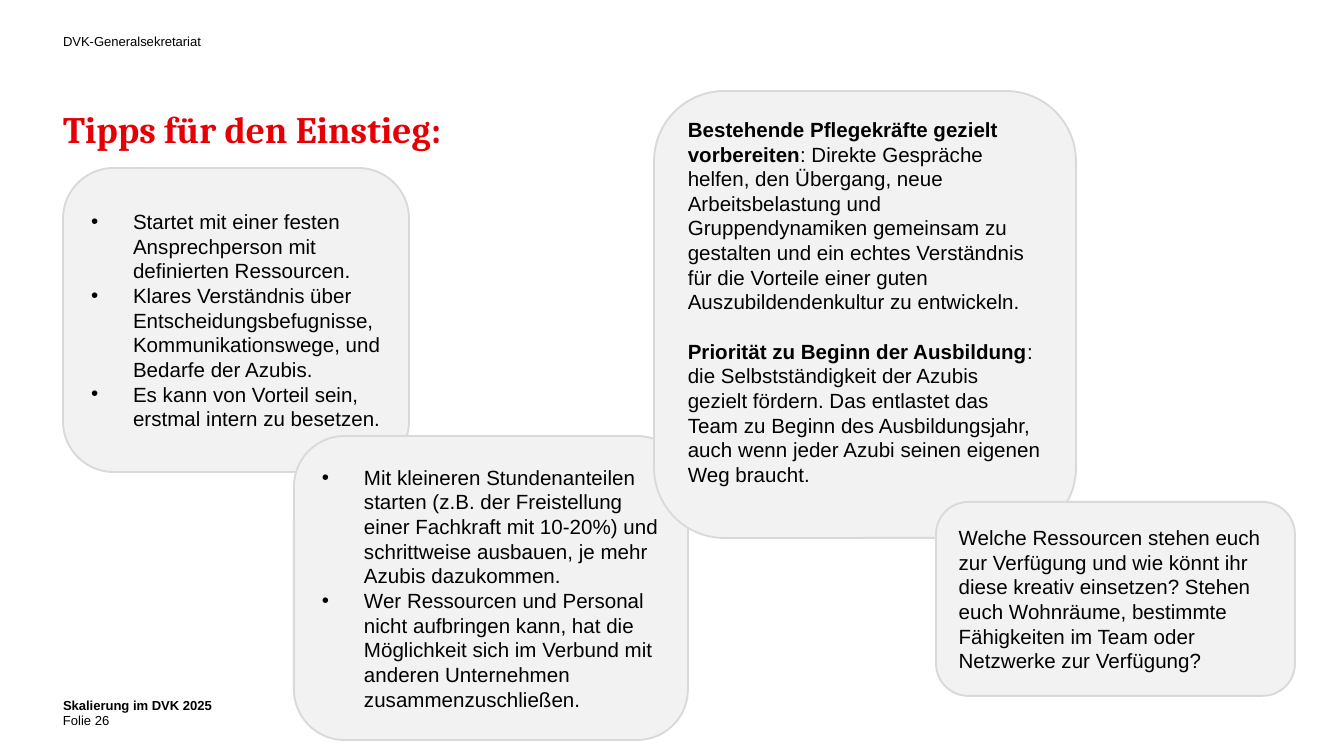
from dataclasses import dataclass

from lxml import etree
from pptx import Presentation
from pptx.dml.color import RGBColor
from pptx.enum.shapes import MSO_SHAPE
from pptx.enum.text import MSO_ANCHOR, PP_ALIGN
from pptx.oxml.ns import qn
from pptx.util import Emu, Pt

ROUNDED = MSO_SHAPE.ROUNDED_RECTANGLE
TOP, MIDDLE, BOTTOM = MSO_ANCHOR.TOP, MSO_ANCHOR.MIDDLE, MSO_ANCHOR.BOTTOM
LEFT = PP_ALIGN.LEFT
EMU_PER_PX = 914400 / 134.4
BULLET_INDENT = 42
EMPTY_LINE = 25
CARD_INSET = 7


@dataclass(frozen=True)
class TextStyle:
    font: str
    size: float
    leading: float
    color: RGBColor


@dataclass(frozen=True)
class Theme:
    card_fill = RGBColor(0xF2, 0xF2, 0xF2)
    card_line = RGBColor(0xD9, 0xD9, 0xD9)
    black = RGBColor(0, 0, 0)
    title = TextStyle("Cambria", 20, 24, RGBColor(0xE6, 0x00, 0x05))
    small = TextStyle("Arial", 7, 9, black)
    body = TextStyle("Arial", 11, 13.2, black)


THEME = Theme()

STARTING_TIPS = [
    "Startet mit einer festen Ansprechperson mit definierten Ressourcen.",
    "Klares Verständnis über Entscheidungsbefugnisse, Kommunikationswege, "
    "und Bedarfe der Azubis.",
    "Es kann von Vorteil sein, erstmal intern zu besetzen.",
]
SCALING_TIPS = [
    "Mit kleineren Stundenanteilen starten (z.B. der Freistellung einer Fachkraft "
    "mit 10-20%) und schrittweise ausbauen, je mehr Azubis dazukommen.",
    "Wer Ressourcen und Personal nicht aufbringen kann, hat die Möglichkeit sich im "
    "Verbund mit anderen Unternehmen zusammenzuschließen.",
]
TEAM_TIPS = [
    ("Bestehende Pflegekräfte gezielt vorbereiten",
     ": Direkte Gespräche helfen, den Übergang, neue Arbeitsbelastung und "
     "Gruppendynamiken gemeinsam zu gestalten und ein echtes Verständnis für die "
     "Vorteile einer guten Auszubildendenkultur zu entwickeln."),
    ("Priorität zu Beginn der Ausbildung",
     ": die Selbstständigkeit der Azubis gezielt fördern. Das entlastet das Team zu "
     "Beginn des Ausbildungsjahr, auch wenn jeder Azubi seinen eigenen Weg braucht."),
]
RESOURCE_QUESTION = (
    "Welche Ressourcen stehen euch zur Verfügung und wie könnt ihr diese kreativ "
    "einsetzen? Stehen euch Wohnräume, bestimmte Fähigkeiten im Team oder Netzwerke "
    "zur Verfügung?"
)


def px(length):
    return Emu(round(length * EMU_PER_PX))


def add_run(paragraph, text, style, bold=False):
    run = paragraph.add_run()
    run.text = text
    run.font.name = style.font
    run.font.size = Pt(style.size)
    run.font.bold = bold
    run.font.color.rgb = style.color


def add_paragraph(frame, index, style):
    paragraph = frame.add_paragraph() if index else frame.paragraphs[0]
    paragraph.alignment = LEFT
    paragraph.line_spacing = Pt(style.leading)
    return paragraph


def add_bullet(paragraph):
    properties = paragraph._p.get_or_add_pPr()
    properties.set("marL", str(px(BULLET_INDENT)))
    properties.set("indent", str(-px(BULLET_INDENT)))
    etree.SubElement(properties, qn("a:buFont")).set("typeface", "Arial")
    etree.SubElement(properties, qn("a:buChar")).set("char", "•")


def add_label(slide, box, text, style, bold=False, anchor=TOP):
    frame = slide.shapes.add_textbox(*map(px, box)).text_frame
    frame.word_wrap = True
    frame.vertical_anchor = anchor
    frame.margin_left = frame.margin_right = 0
    frame.margin_top = frame.margin_bottom = 0
    add_run(add_paragraph(frame, 0, style), text, style, bold)


def add_card(slide, box):
    card = slide.shapes.add_shape(ROUNDED, *map(px, box))
    card.shadow.inherit = False
    card.fill.solid()
    card.fill.fore_color.rgb = THEME.card_fill
    card.line.color.rgb = THEME.card_line
    card.line.width = Pt(1)
    frame = card.text_frame
    frame.word_wrap = True
    frame.vertical_anchor = MIDDLE
    return frame


def add_bullet_card(slide, box, tips):
    frame = add_card(slide, box)
    for index, tip in enumerate(tips):
        paragraph = add_paragraph(frame, index, THEME.body)
        add_bullet(paragraph)
        add_run(paragraph, tip, THEME.body)


def add_topic_card(slide, box, topics):
    frame = add_card(slide, box)
    frame.margin_bottom = px(CARD_INSET + EMPTY_LINE)
    for index, (topic, advice) in enumerate(topics):
        paragraph = add_paragraph(frame, index, THEME.body)
        if index:
            paragraph.space_before = Pt(THEME.body.leading)
        add_run(paragraph, topic, THEME.body, bold=True)
        add_run(paragraph, advice, THEME.body)


def add_question_card(slide, box, question):
    frame = add_card(slide, box)
    add_run(add_paragraph(frame, 0, THEME.body), question, THEME.body)


def main():
    deck = Presentation()
    deck.slide_width, deck.slide_height = px(1344), px(756)
    slide = deck.slides.add_slide(deck.slide_layouts[6])

    add_label(slide, (63, 711, 40, 17), "Folie", THEME.small, anchor=BOTTOM)
    add_label(slide, (63, 32, 241, 16), "DVK-Generalsekretariat", THEME.small)
    add_label(slide, (63, 106, 1083, 86), "Tipps für den Einstieg:", THEME.title, bold=True)
    add_label(slide, (63, 696, 1218, 12), "Skalierung im DVK 2025", THEME.small, bold=True)
    add_label(slide, (95, 712, 302, 16), "26", THEME.small, anchor=BOTTOM)

    add_bullet_card(slide, (63, 168, 346, 304), STARTING_TIPS)
    add_bullet_card(slide, (294, 436, 394, 304), SCALING_TIPS)
    add_topic_card(slide, (654, 91, 422, 447), TEAM_TIPS)
    add_question_card(slide, (936, 502, 359, 194), RESOURCE_QUESTION)

    deck.save("out.pptx")


if __name__ == "__main__":
    main()
